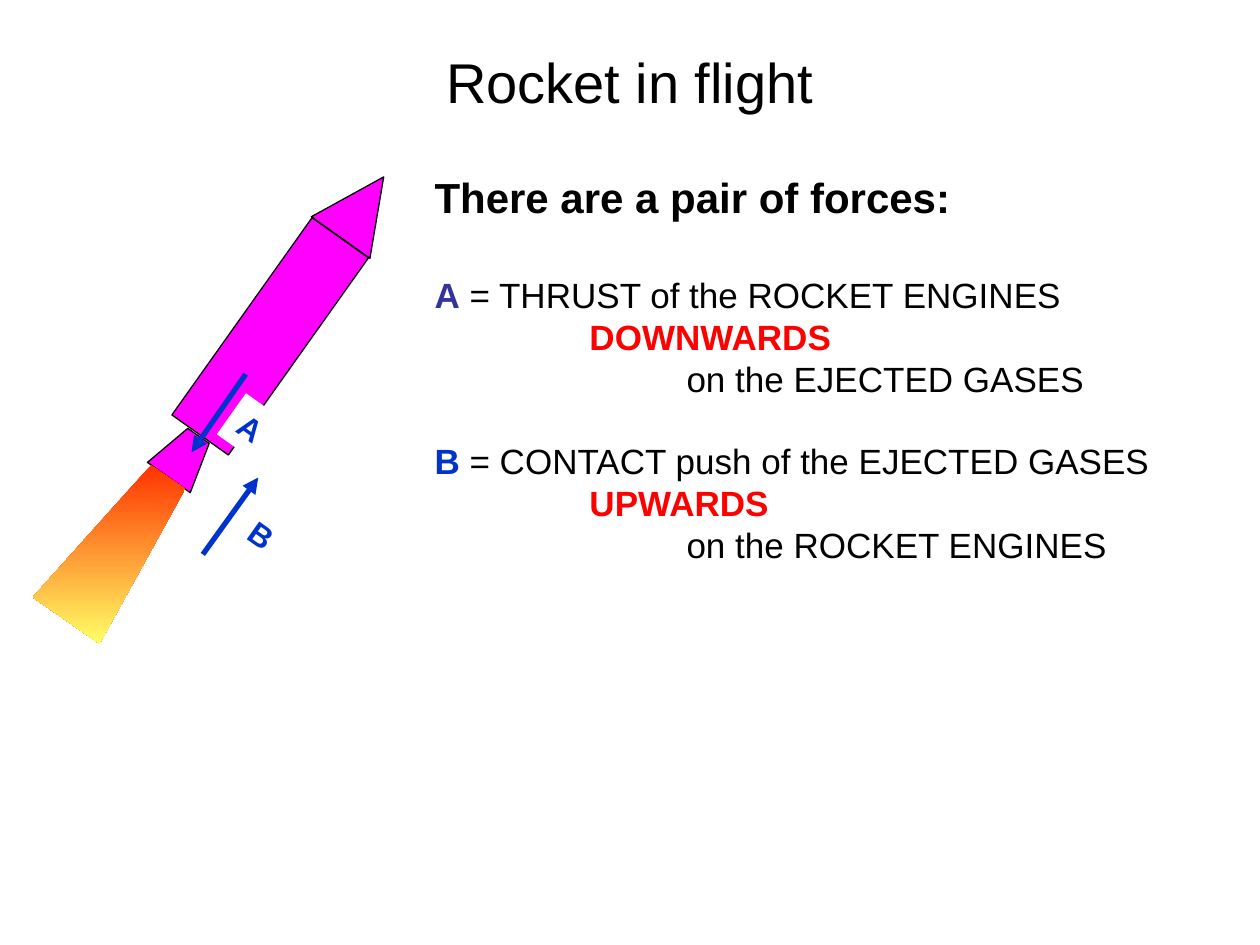
from lxml import etree
from pptx import Presentation
from pptx.dml.color import RGBColor
from pptx.enum.shapes import MSO_CONNECTOR, MSO_SHAPE
from pptx.enum.text import MSO_ANCHOR, PP_ALIGN
from pptx.oxml.ns import qn
from pptx.util import Inches, Pt

BLACK, BLUE, INDIGO, RED = "000000", "0033CC", "333399", "FF0000"
MAGENTA, WHITE, FLAME_TOP, FLAME_END = "FF00FF", "FFFFFF", "FF3300", "FFFF66"


def color(value):
    """Turn a hex string into a colour."""
    return RGBColor.from_string(value)


def add_run(paragraph, text, size, value, bold=False):
    """Add one formatted run to a paragraph."""
    run = paragraph.add_run()
    run.text = text
    run.font.name = "Arial"
    run.font.size = Pt(size)
    run.font.bold = bold
    run.font.color.rgb = color(value)


def add_text_frame(slide, left, top, width, height):
    """Add a wrapping text box and return its text frame."""
    shape = slide.shapes.add_textbox(Inches(left), Inches(top), Inches(width), Inches(height))
    shape.text_frame.word_wrap = True
    return shape.text_frame


def add_title(slide, left, top, width, height):
    """Place the centred slide title."""
    frame = add_text_frame(slide, left, top, width, height)
    frame.vertical_anchor = MSO_ANCHOR.MIDDLE
    frame.paragraphs[0].alignment = PP_ALIGN.CENTER
    add_run(frame.paragraphs[0], "Rocket in flight", 32, BLACK)


def add_explanation(slide, left, top, width, height):
    """Place the heading and the description of both forces."""
    frame = add_text_frame(slide, left, top, width, height)
    heading = frame.paragraphs[0]
    heading.line_spacing = 0.8
    heading.space_before = Pt(2.5)
    add_run(heading, "There are a pair of forces:", 24, BLACK, True)
    forces = [
        ("A", INDIGO, " = THRUST of the ROCKET ENGINES", "DOWNWARDS", "on the EJECTED GASES", 34),
        ("B", BLUE, " = CONTACT push of the EJECTED GASES", "UPWARDS", "on the ROCKET ENGINES", 28),
    ]
    for letter, letter_color, force, direction, target, gap in forces:
        lines = [
            (0, gap, [(letter, letter_color, True), (force, BLACK, False)]),
            (1.23, 4.8, [(direction, RED, True)]),
            (2, 4.8, [(target, BLACK, False)]),
        ]
        for indent, space, runs in lines:
            paragraph = frame.add_paragraph()
            paragraph.line_spacing = 0.8
            paragraph.space_before = Pt(space)
            paragraph._p.get_or_add_pPr().set("marL", str(Inches(indent)))
            for text, value, bold in runs:
                add_run(paragraph, text, 20, value, bold)


def style_body(shape):
    """Give a rocket part its magenta fill and thin black outline."""
    shape.shadow.inherit = False
    shape.fill.solid()
    shape.fill.fore_color.rgb = color(MAGENTA)
    shape.line.color.rgb = color(BLACK)
    shape.line.width = Pt(0.75)


def add_outline(slide, left, top, points):
    """Build a closed outline from points relative to a corner."""
    corners = [(Inches(left + x), Inches(top + y)) for x, y in points]
    builder = slide.shapes.build_freeform(*corners[0])
    builder.add_line_segments(corners[1:], close=True)
    shape = builder.convert_to_shape()
    shape.shadow.inherit = False
    return shape


def add_rocket(slide, left, top):
    """Place the tilted rocket with its nozzle and flame."""
    parts = [
        (MSO_SHAPE.RECTANGLE, 1.61, 0.36, 0.55, 1.92),
        (MSO_SHAPE.ISOSCELES_TRIANGLE, 2.33, 0, 0.57, 0.59),
    ]
    for kind, x, y, width, height in parts:
        shape = slide.shapes.add_shape(
            kind, Inches(left + x), Inches(top + y), Inches(width), Inches(height))
        shape.rotation = 35.4
        style_body(shape)
    nozzle = add_outline(slide, left, top, [(1.25, 2.56), (1.4, 2.17), (1.23, 2.05), (0.91, 2.32)])
    style_body(nozzle)
    flame = add_outline(slide, left, top, [(0.53, 3.76), (1.21, 2.53), (0.94, 2.34), (0, 3.39)])
    flame.fill.gradient()
    flame.fill.gradient_angle = 270
    for stop, value in zip(flame.fill.gradient_stops, (FLAME_TOP, FLAME_END)):
        stop.color.rgb = color(value)
    flame.line.fill.background()


def add_arrow(slide, start, end):
    """Draw a blue force arrow that points at its end."""
    arrow = slide.shapes.add_connector(
        MSO_CONNECTOR.STRAIGHT, *(Inches(value) for value in start + end))
    arrow.line.color.rgb = color(BLUE)
    arrow.line.width = Pt(3)
    etree.SubElement(arrow.line._get_or_add_ln(), qn("a:tailEnd"), type="triangle")
    etree.SubElement(arrow._element.spPr, qn("a:effectLst"))


def add_label(slide, text, left, top, width, height, fill=None):
    """Place a tilted force letter, on a fill if one is given."""
    shape = slide.shapes.add_shape(
        MSO_SHAPE.RECTANGLE, Inches(left), Inches(top), Inches(width), Inches(height))
    shape.shadow.inherit = False
    shape.rotation = 35.3
    shape.line.fill.background()
    if fill:
        shape.fill.solid()
        shape.fill.fore_color.rgb = color(fill)
    else:
        shape.fill.background()
    shape.text_frame.vertical_anchor = MSO_ANCHOR.TOP
    paragraph = shape.text_frame.paragraphs[0]
    paragraph.alignment = PP_ALIGN.LEFT
    add_run(paragraph, text, 18, BLUE, True)


def add_forces(slide, left, top):
    """Place the two force arrows with their letters."""
    add_arrow(slide, (left + 0.43, top), (left, top + 0.62))
    add_label(slide, "A", left + 0.28, top + 0.23, 0.4, 0.4, WHITE)
    add_arrow(slide, (left + 0.09, top + 1.43), (left + 0.53, top + 0.82))
    add_label(slide, "B", left + 0.35, top + 1.13, 0.57, 0.4)


def main():
    """Build and save the slide."""
    presentation = Presentation()
    presentation.slide_width = Inches(10)
    presentation.slide_height = Inches(7.5)
    slide = presentation.slides.add_slide(presentation.slide_layouts[6])
    add_title(slide, 0.5, 0.3, 9, 0.69)
    add_explanation(slide, 3.35, 1.39, 6.22, 5.04)
    add_rocket(slide, 0.26, 1.35)
    add_forces(slide, 1.52, 2.97)
    presentation.save("out.pptx")


if __name__ == "__main__":
    main()
